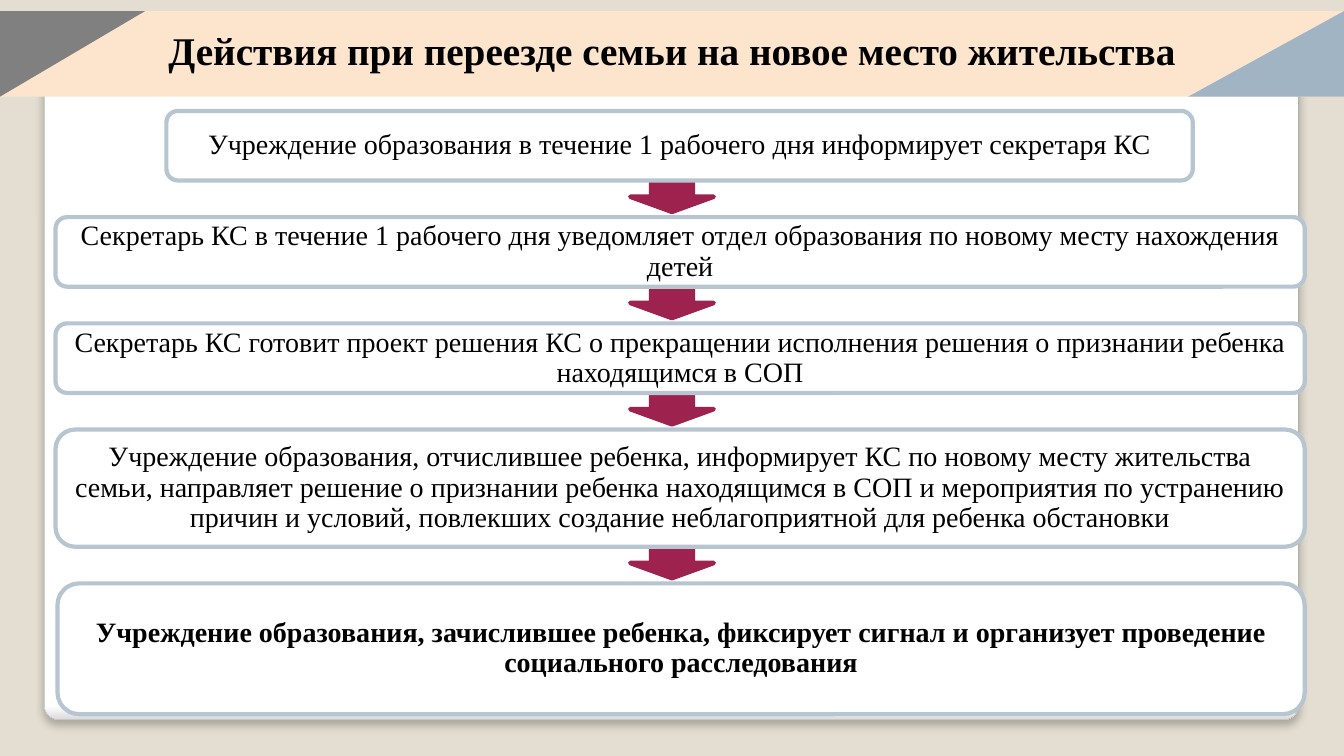
from dataclasses import dataclass

from lxml.etree import SubElement
from pptx import Presentation
from pptx.dml.color import RGBColor
from pptx.enum.shapes import MSO_SHAPE
from pptx.enum.text import MSO_ANCHOR, PP_ALIGN
from pptx.oxml.ns import qn
from pptx.shapes.autoshape import Shape
from pptx.util import Emu, Inches, Pt

BACKGROUND = RGBColor(0xE3, 0xDE, 0xD1)
WHITE = RGBColor(0xFF, 0xFF, 0xFF)
BLACK = RGBColor(0x00, 0x00, 0x00)
PANEL_EDGE = RGBColor(0xDA, 0xDA, 0xDA)
PANEL_LINE = RGBColor(0xA4, 0xA4, 0xA4)
BANNER = RGBColor(0xFD, 0xE5, 0xCD)
GRAY = RGBColor(0x80, 0x80, 0x80)
BLUE_GRAY = RGBColor(0xA1, 0xB4, 0xC3)
STEP_LINE = RGBColor(0xB7, 0xC5, 0xD1)
ARROW = RGBColor(0x9E, 0x22, 0x4E)

# Lengths are percentages of the slide's width and height
BANNER_TOP, BANNER_HEIGHT = 1.47, 11.33
FIRST_STEP_TOP, STEP_GAP = 14.67, 4.85
ARROW_WIDTH, ARROW_HEIGHT, ARROW_OFFSET = 6.2, 4, 0.15


@dataclass
class Step:
    text: str
    left: float
    width: float
    height: float
    bold: bool = False


@dataclass
class Corner:
    left: float
    width: float
    color: RGBColor
    flip: str


STEPS = [
    Step("Учреждение образования в течение 1 рабочего дня информирует секретаря КС",
         12.38, 76.37, 9.2),
    Step("Секретарь КС в течение 1 рабочего дня уведомляет отдел образования "
         "по новому месту нахождения детей", 4.13, 92.95, 9.2),
    Step("Секретарь КС готовит проект решения КС о прекращении исполнения решения "
         "о признании ребенка находящимся в СОП", 4.13, 92.95, 9.2),
    Step("Учреждение образования, отчислившее ребенка, информирует КС по новому "
         "месту жительства семьи, направляет решение о признании ребенка "
         "находящимся в СОП и мероприятия по устранению причин и условий, "
         "повлекших создание неблагоприятной для ребенка обстановки",
         4.13, 92.95, 15.5),
    Step("Учреждение образования, зачислившее ребенка, фиксирует сигнал и "
         "организует проведение социального расследования",
         4.28, 92.8, 17.3, bold=True),
]
CORNERS = [Corner(0, 10.8, GRAY, "flipV"), Corner(88.4, 11.6, BLUE_GRAY, "flipH")]

deck = Presentation()
deck.slide_width, deck.slide_height = Inches(13.33), Inches(7.5)
page = deck.slides.add_slide(deck.slide_layouts[6])
page.background.fill.solid()
page.background.fill.fore_color.rgb = BACKGROUND


def add_block(kind: MSO_SHAPE, left: float, top: float, width: float, height: float,
              color: RGBColor, line: RGBColor | None = None,
              line_width: float = 0) -> Shape:
    block = page.shapes.add_shape(
        kind,
        Emu(round(deck.slide_width * left / 100)),
        Emu(round(deck.slide_height * top / 100)),
        Emu(round(deck.slide_width * width / 100)),
        Emu(round(deck.slide_height * height / 100)))
    block.shadow.inherit = False
    block.fill.solid()
    block.fill.fore_color.rgb = color
    if line is None:
        block.line.fill.background()
    else:
        block.line.color.rgb = line
        block.line.width = Pt(line_width)
    return block


def write(box: Shape, text: str, size: float, bold: bool, spacing: float) -> None:
    frame = box.text_frame
    frame.word_wrap = True
    frame.vertical_anchor = MSO_ANCHOR.MIDDLE
    para = frame.paragraphs[0]
    para.text = text
    para.alignment = PP_ALIGN.CENTER
    para.line_spacing = spacing
    para.font.name = "Times New Roman"
    para.font.size = Pt(size)
    para.font.bold = bold
    para.font.color.rgb = BLACK


def add_panel() -> None:
    panel = add_block(MSO_SHAPE.ROUNDED_RECTANGLE, 3.3, 4.8, 93.32, 90.4,
                      WHITE, PANEL_LINE, 0.16)
    panel.adjustments[0] = 0.021
    panel.fill.gradient()
    panel.fill.gradient_angle = 270
    for stop, position, color in zip(panel.fill.gradient_stops, (0.98, 1),
                                     (WHITE, PANEL_EDGE)):
        stop.position = position
        stop.color.rgb = color
    effects = panel.element.spPr.find(qn("a:effectLst"))
    shadow = SubElement(effects, qn("a:outerShdw"), blurRad=str(Pt(6)),
                        dist=str(Pt(4)), dir="5400000", rotWithShape="0")
    shade = SubElement(shadow, qn("a:srgbClr"), val=str(BLACK))
    SubElement(shade, qn("a:alpha"), val="25000")


def add_banner() -> None:
    banner = add_block(MSO_SHAPE.RECTANGLE, 0, BANNER_TOP, 100, BANNER_HEIGHT, BANNER)
    write(banner, "Действия при переезде семьи на новое место жительства", 28, True, 0.8)
    for corner in CORNERS:
        triangle = add_block(MSO_SHAPE.RIGHT_TRIANGLE, corner.left, BANNER_TOP,
                             corner.width, BANNER_HEIGHT, corner.color)
        triangle.element.spPr.find(qn("a:xfrm")).set(corner.flip, "1")


def add_steps() -> None:
    top = FIRST_STEP_TOP
    for step in STEPS:
        # Arrow from the step above
        if step is not STEPS[0]:
            add_block(MSO_SHAPE.DOWN_ARROW, 50 - ARROW_WIDTH / 2,
                      top - STEP_GAP + ARROW_OFFSET, ARROW_WIDTH, ARROW_HEIGHT,
                      ARROW, ARROW, 3.35)
        top += step.height + STEP_GAP
    # Boxes lie over the arrows
    top = FIRST_STEP_TOP
    for step in STEPS:
        box = add_block(MSO_SHAPE.ROUNDED_RECTANGLE, step.left, top, step.width,
                        step.height, WHITE, STEP_LINE, 3)
        write(box, step.text, 20, step.bold, 0.9)
        top += step.height + STEP_GAP


add_panel()
add_banner()
add_steps()
deck.save("out.pptx")
